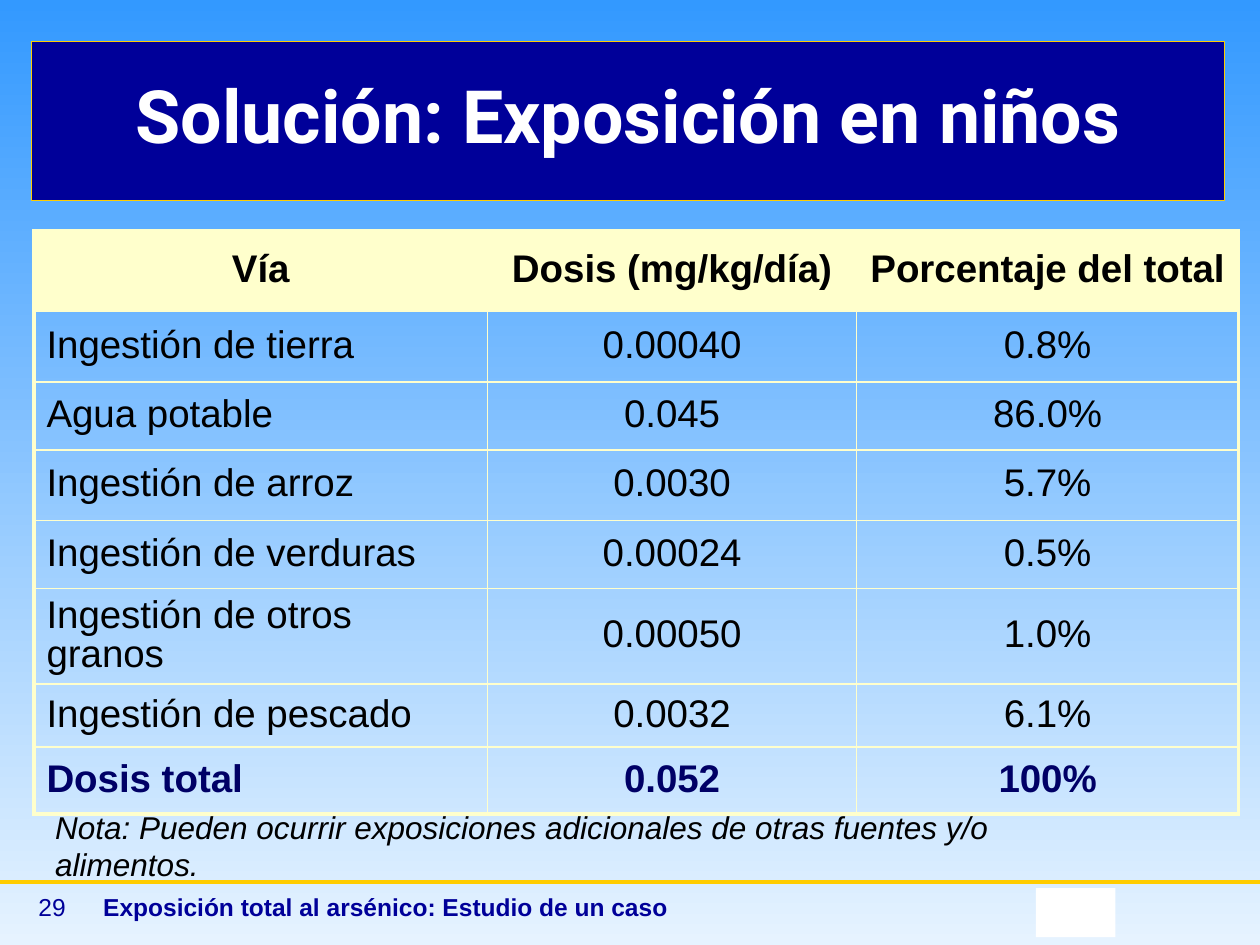
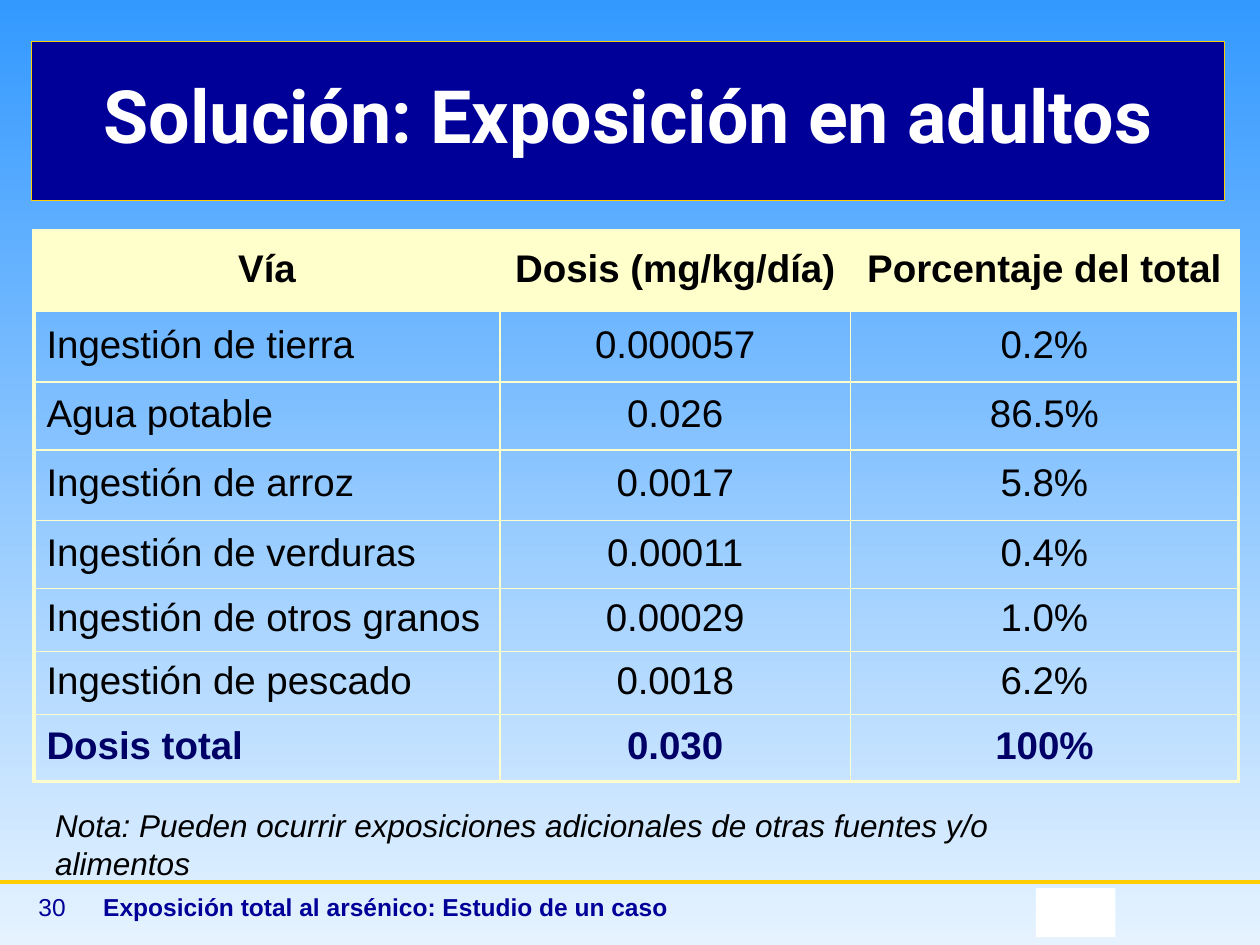
from lxml.etree import SubElement
from pptx import Presentation
from pptx.dml.color import RGBColor
from pptx.enum.shapes import MSO_CONNECTOR, MSO_SHAPE
from pptx.enum.text import MSO_ANCHOR, MSO_AUTO_SIZE, PP_ALIGN
from pptx.oxml.ns import qn
from pptx.util import Pt

COLORS = {
    "sky": "3399FF", "mist": "E6F3FF", "navy": "000099", "total": "000066",
    "gold": "FFCC00", "cream": "FFFFCC", "white": "FFFFFF", "black": "000000",
}
RGB = {name: RGBColor.from_string(value) for name, value in COLORS.items()}

HEADER = ["Vía", "Dosis (mg/kg/día)", "Porcentaje del total"]
ROUTES = ["Ingestión de tierra", "Agua potable", "Ingestión de arroz",
          "Ingestión de verduras", "Ingestión de otros granos",
          "Ingestión de pescado", "Dosis total"]
FOOTER = "Exposición total al arsénico: Estudio de un caso"
NOTE = "Nota: Pueden ocurrir exposiciones adicionales de otras fuentes y/o alimentos"

SLIDES = [
    {"number": "29", "title": "Solución: Exposición en niños",
     "doses": ["0.00040", "0.045", "0.0030", "0.00024", "0.00050", "0.0032", "0.052"],
     "shares": ["0.8%", "86.0%", "5.7%", "0.5%", "1.0%", "6.1%", "100%"],
     "cols": [259.2, 211, 218.2], "grain_height": 54.7,
     "note": NOTE + ".", "note_top": 458, "note_width": 634, "note_wrap": False},
    {"number": "30", "title": "Solución: Exposición en adultos",
     "doses": ["0.000057", "0.026", "0.0017", "0.00011", "0.00029", "0.0018", "0.030"],
     "shares": ["0.2%", "86.5%", "5.8%", "0.4%", "1.0%", "6.2%", "100%"],
     "cols": [266.4, 200.2, 221.8], "grain_height": 36,
     "note": NOTE, "note_top": 457.2, "note_width": 620, "note_wrap": True},
]


def add_run(p, text, size, color, font="Arial", bold=False, italic=False):
    r = p.add_run()
    r.text = text
    r.font.name, r.font.size = font, Pt(size)
    r.font.bold, r.font.italic = bold, italic
    r.font.color.rgb = RGB[color]


def add_text(s, left, top, width, height, margin=None, wrap=True):
    tf = s.shapes.add_textbox(Pt(left), Pt(top), Pt(width), Pt(height)).text_frame
    tf.word_wrap = wrap
    if margin is not None:
        tf.margin_left = tf.margin_right = tf.margin_top = tf.margin_bottom = Pt(margin)
    return tf.paragraphs[0]


prs = Presentation()
prs.slide_width, prs.slide_height = Pt(720), Pt(540)
layout = prs.slide_layouts[5]

# Shared background
fill = layout.background.fill
fill.gradient()
fill.gradient_angle = 270
for stop, color in zip(fill.gradient_stops, ["sky", "mist"]):
    stop.color.rgb = RGB[color]

for data in SLIDES:
    s = prs.slides.add_slide(layout)

    # Footer rule, emblem plate, caption and number
    rule = s.shapes.add_connector(MSO_CONNECTOR.STRAIGHT, 0, Pt(504), Pt(720), Pt(504))
    rule.line.color.rgb = RGB["gold"]
    rule.line.width = Pt(2.25)
    SubElement(rule._element.spPr, qn("a:effectLst"))
    plate = s.shapes.add_shape(MSO_SHAPE.RECTANGLE, Pt(592), Pt(507.5), Pt(45.4), Pt(28))
    plate.shadow.inherit = False
    plate.fill.solid()
    plate.fill.fore_color.rgb = RGB["white"]
    plate.line.fill.background()
    add_run(add_text(s, 59, 510, 338, 16.5, 0), FOOTER, 14, "navy", bold=True)
    add_run(add_text(s, 22, 510, 37, 16.5, 0), data["number"], 14, "navy")

    # Title band
    sp = s.shapes.title
    sp.left, sp.top, sp.width, sp.height = Pt(18), Pt(23.8), Pt(681.8), Pt(90.7)
    sp.fill.solid()
    sp.fill.fore_color.rgb = RGB["navy"]
    sp.line.color.rgb = RGB["gold"]
    sp.line.width = Pt(0.75)
    tf = sp.text_frame
    tf.auto_size = MSO_AUTO_SIZE.NONE
    tf.vertical_anchor = MSO_ANCHOR.MIDDLE
    p = tf.paragraphs[0]
    p.alignment, p.line_spacing = PP_ALIGN.CENTER, 0.85
    add_run(p, data["title"], 42, "white", "Roboto", bold=True)

    # Dose table
    rows = [HEADER, *zip(ROUTES, data["doses"], data["shares"])]
    heights = [46.1, 40.3, 38.9, 40.3, 38.9, data["grain_height"], 36, 38.2]
    last_row, last_col = len(rows) - 1, len(HEADER) - 1
    table = s.shapes.add_table(len(rows), len(HEADER), Pt(19.4), Pt(131.8),
                               Pt(sum(data["cols"])), Pt(sum(heights))).table
    table.first_row = table.horz_banding = False
    for col, width in zip(table.columns, data["cols"]):
        col.width = Pt(width)
    for i, (values, height) in enumerate(zip(rows, heights)):
        table.rows[i].height = Pt(height)
        for j, value in enumerate(values):
            cell = table.cell(i, j)
            cell.vertical_anchor = MSO_ANCHOR.MIDDLE
            p = cell.text_frame.paragraphs[0]
            p.line_spacing = 0.9
            p.alignment = PP_ALIGN.LEFT if i and j == 0 else PP_ALIGN.CENTER
            add_run(p, value, 22, "total" if i == last_row else "black",
                    bold=i in (0, last_row))
            # Thick outer frame, thin inner grid
            outer = {"lnL": j == 0, "lnR": j == last_col,
                     "lnT": i == 0, "lnB": i == last_row}
            tc_pr = cell._tc.get_or_add_tcPr()
            for side, thick in outer.items():
                ln = SubElement(tc_pr, qn(f"a:{side}"), w=str(Pt(2.25 if thick else 1)))
                SubElement(SubElement(ln, qn("a:solidFill")), qn("a:srgbClr"),
                           val=COLORS["cream"])
            if i == 0:
                cell.fill.solid()
                cell.fill.fore_color.rgb = RGB["cream"]
            else:
                cell.fill.background()

    # Note under the table
    p = add_text(s, 24.5, data["note_top"], data["note_width"], 28.8, wrap=data["note_wrap"])
    add_run(p, data["note"], 18, "black", italic=True)

prs.save("out.pptx")
